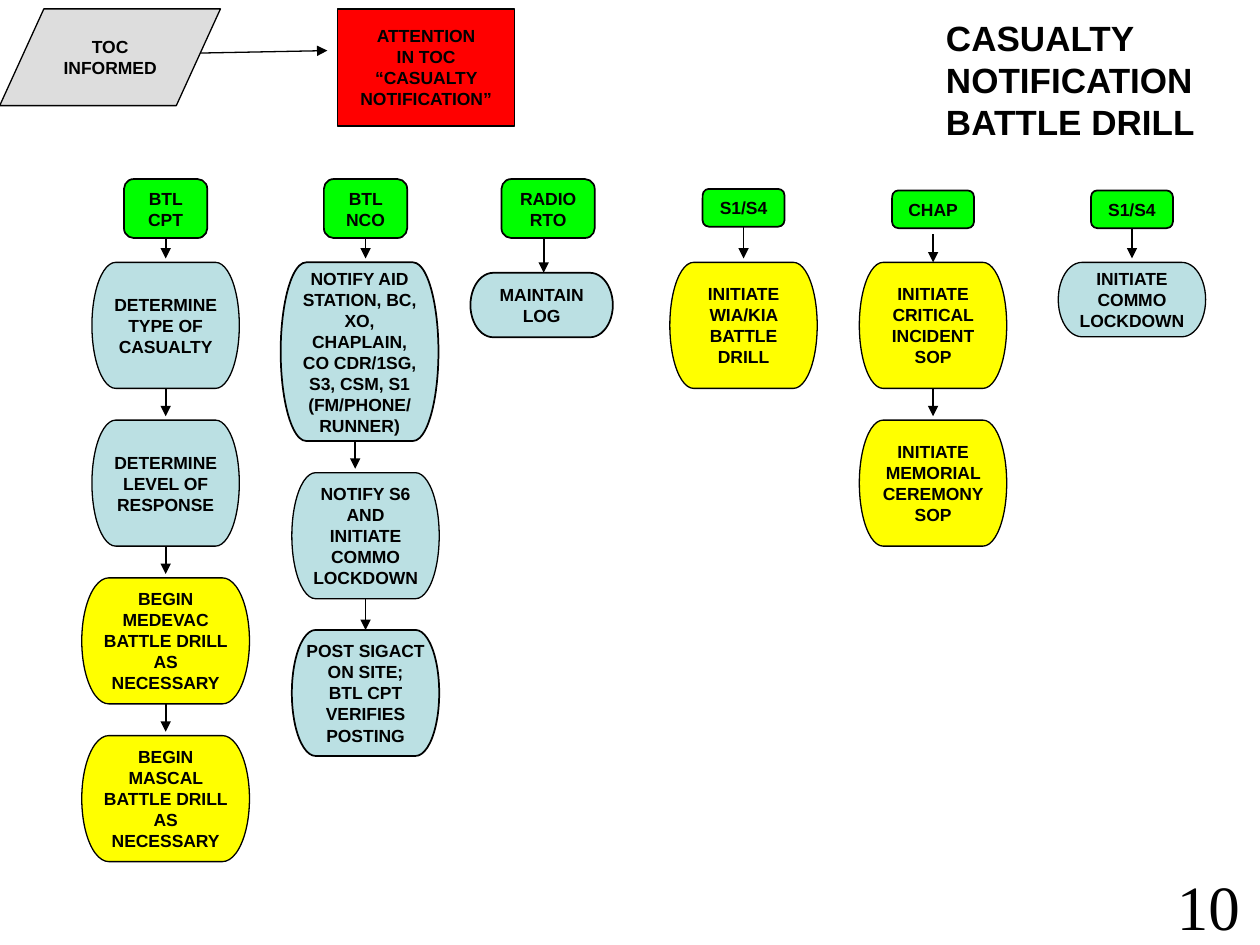
from dataclasses import dataclass
from typing import Any

from lxml.etree import SubElement
from pptx import Presentation
from pptx.dml.color import RGBColor
from pptx.enum.shapes import MSO_CONNECTOR, MSO_SHAPE
from pptx.enum.text import MSO_ANCHOR, PP_ALIGN
from pptx.oxml.ns import qn
from pptx.util import Cm, Pt


@dataclass(frozen=True)
class Theme:
    black: str = "000000"
    grey: str = "DDDDDD"
    red: str = "FF0000"
    green: str = "00FF00"
    blue: str = "BBE0E3"
    yellow: str = "FFFF00"
    sans: str = "Arial"
    serif: str = "Times New Roman"
    body_size: float = 10
    title_size: float = 20
    number_size: float = 36
    thin: float = 0.75
    thick: float = 1


THEME = Theme()
FIRST_ROW = 5.29
ROW_PITCH = 3.18
STEP_WIDTH = 2.97
WIDE_STEP = 3.38
STEP_HEIGHT = 2.54
ARROW_GAP = 0.08
MARGINS = (0.25, 0.13)


@dataclass(frozen=True)
class Box:
    text: str
    center: float
    top: float
    width: float
    height: float
    fill: str
    kind: MSO_SHAPE = MSO_SHAPE.FLOWCHART_TERMINATOR
    line: float = THEME.thin
    margins: tuple[float, float] = MARGINS


@dataclass(frozen=True)
class Arrow:
    start: tuple[float, float]
    end: tuple[float, float]
    line: float = THEME.thick


def header(text: str, center: float, top: float, width: float, height: float) -> Box:
    return Box(text, center, top, width, height, THEME.green,
               MSO_SHAPE.FLOWCHART_ALTERNATE_PROCESS, THEME.thick)


def step(text: str, center: float, row: int, fill: str, width: float = STEP_WIDTH) -> Box:
    return Box(text, center, FIRST_ROW + row * ROW_PITCH, width, STEP_HEIGHT, fill)


def drop(center: float, start: float, next_top: float, gap: float = ARROW_GAP) -> Arrow:
    return Arrow((center, start), (center, next_top - gap))


CAPTAIN, SERGEANT, RADIO, MEDICAL, CHAPLAIN, LOCKDOWN = 3.34, 7.37, 10.92, 14.99, 18.81, 22.82
SERGEANT_ROWS = (9.53, 12.7)

BOXES = [
    Box("TOC INFORMED", 2.22, 0.18, 4.45, 1.95, THEME.grey, MSO_SHAPE.FLOWCHART_DATA),
    Box("ATTENTION\nIN TOC\n“CASUALTY NOTIFICATION”", 8.59, 0.18, 3.56, 2.36, THEME.red,
        MSO_SHAPE.FLOWCHART_PROCESS),
    header("BTL CPT", CAPTAIN, 3.61, 1.68, 1.19),
    header("BTL NCO", SERGEANT, 3.61, 1.68, 1.19),
    header("RADIO RTO", 11.05, 3.61, 1.88, 1.19),
    header("S1/S4", MEDICAL, 3.81, 1.65, 0.76),
    header("CHAP", CHAPLAIN, 3.84, 1.65, 0.76),
    header("S1/S4", LOCKDOWN, 3.84, 1.65, 0.76),
    step("DETERMINE TYPE OF CASUALTY", CAPTAIN, 0, THEME.blue),
    step("DETERMINE LEVEL OF RESPONSE", CAPTAIN, 1, THEME.blue),
    step("BEGIN MEDEVAC BATTLE DRILL AS NECESSARY", CAPTAIN, 2, THEME.yellow, WIDE_STEP),
    step("BEGIN MASCAL BATTLE DRILL AS NECESSARY", CAPTAIN, 3, THEME.yellow, WIDE_STEP),
    Box("NOTIFY AID STATION, BC, XO, CHAPLAIN, CO CDR/1SG, S3, CSM, S1\n(FM/PHONE/ RUNNER)",
        7.25, FIRST_ROW, 3.18, 3.6, THEME.blue, line=THEME.thick, margins=(0.25, 0)),
    Box("NOTIFY S6 AND INITIATE COMMO LOCKDOWN", SERGEANT, SERGEANT_ROWS[0],
        STEP_WIDTH, STEP_HEIGHT, THEME.blue),
    Box("POST SIGACT ON SITE;\nBTL CPT VERIFIES POSTING", SERGEANT, SERGEANT_ROWS[1],
        STEP_WIDTH, STEP_HEIGHT, THEME.blue, line=THEME.thick, margins=(0, 0)),
    Box("MAINTAIN LOG", RADIO, 5.5, 2.87, 1.3, THEME.blue, line=THEME.thick),
    step("INITIATE WIA/KIA BATTLE DRILL", MEDICAL, 0, THEME.yellow),
    step("INITIATE CRITICAL INCIDENT SOP", CHAPLAIN, 0, THEME.yellow),
    step("INITIATE MEMORIAL CEREMONY SOP", CHAPLAIN, 1, THEME.yellow),
    Box("INITIATE COMMO LOCKDOWN", LOCKDOWN, FIRST_ROW, STEP_WIDTH, 1.5, THEME.blue),
]

STEP_ARROWS = [
    drop(center, FIRST_ROW + (row - 1) * ROW_PITCH + STEP_HEIGHT, FIRST_ROW + row * ROW_PITCH)
    for center, last_row in ((CAPTAIN, 3), (CHAPLAIN, 1))
    for row in range(1, last_row + 1)
]
ARROWS = STEP_ARROWS + [
    Arrow((4.01, 1.07), (6.6, 1.02), THEME.thin),
    drop(CAPTAIN, 4.65, FIRST_ROW),
    drop(SERGEANT, 4.65, FIRST_ROW),
    drop(10.96, 4.65, 5.5, 0),
    drop(MEDICAL, 4.24, FIRST_ROW),
    drop(CHAPLAIN, 4.72, FIRST_ROW, 0),
    drop(LOCKDOWN, 4.24, FIRST_ROW),
    drop(7.16, 8.89, SERGEANT_ROWS[0]),
    drop(SERGEANT, 11.86, SERGEANT_ROWS[1], 0),
]


def apply(target: Any, values: dict[str, Any]) -> None:
    for name, value in values.items():
        setattr(target, name, value)


def place(shape: Any, left: float, top: float, width: float, height: float) -> None:
    apply(shape, {"left": Cm(left), "top": Cm(top), "width": Cm(width), "height": Cm(height)})


def write(shape: Any, text: str, size: float, font: str, bold: bool, alignment: PP_ALIGN,
          anchor: MSO_ANCHOR, margins: tuple[float, float] = MARGINS, wrap: bool = True) -> None:
    horizontal, vertical = (Cm(margin) for margin in margins)
    frame = shape.text_frame
    frame.text = text
    apply(frame, {"word_wrap": wrap, "vertical_anchor": anchor,
                  "margin_left": horizontal, "margin_right": horizontal,
                  "margin_top": vertical, "margin_bottom": vertical})
    for paragraph in frame.paragraphs:
        paragraph.alignment = alignment
        for run in paragraph.runs:
            apply(run.font, {"size": Pt(size), "name": font, "bold": bold})
            run.font.color.rgb = RGBColor.from_string(THEME.black)


def draw_line(line: Any, width: float) -> None:
    line.color.rgb = RGBColor.from_string(THEME.black)
    line.width = Pt(width)


def draw_box(slide: Any, box: Box) -> None:
    shape = slide.shapes.add_shape(box.kind, Cm(box.center - box.width / 2), Cm(box.top),
                                   Cm(box.width), Cm(box.height))
    shape.shadow.inherit = False
    shape.fill.solid()
    shape.fill.fore_color.rgb = RGBColor.from_string(box.fill)
    draw_line(shape.line, box.line)
    write(shape, box.text, THEME.body_size, THEME.sans, True, PP_ALIGN.CENTER,
          MSO_ANCHOR.MIDDLE, box.margins)


def draw_arrow(slide: Any, arrow: Arrow) -> None:
    ends = [Cm(length) for length in arrow.start + arrow.end]
    connector = slide.shapes.add_connector(MSO_CONNECTOR.STRAIGHT, *ends)
    draw_line(connector.line, arrow.line)
    SubElement(connector.line._get_or_add_ln(), qn("a:tailEnd"), type="triangle")
    SubElement(connector._element.spPr, qn("a:effectLst"))


def main() -> None:
    presentation = Presentation()
    apply(presentation, {"slide_width": Cm(25.4), "slide_height": Cm(19.05)})
    slide = presentation.slides.add_slide(presentation.slide_layouts[5])
    title = slide.shapes.title
    place(title, 18.82, 0.2, 6.35, 3)
    write(title, "CASUALTY NOTIFICATION BATTLE DRILL", THEME.title_size, THEME.sans, True,
          PP_ALIGN.LEFT, MSO_ANCHOR.TOP)
    for arrow in ARROWS:
        draw_arrow(slide, arrow)
    for box in BOXES:
        draw_box(slide, box)
    number = slide.shapes.add_textbox(Cm(23.32), Cm(17.35), Cm(2.08), Cm(1.6))
    write(number, "10", THEME.number_size, THEME.serif, False, PP_ALIGN.CENTER,
          MSO_ANCHOR.TOP, wrap=False)
    presentation.save("out.pptx")


if __name__ == "__main__":
    main()
